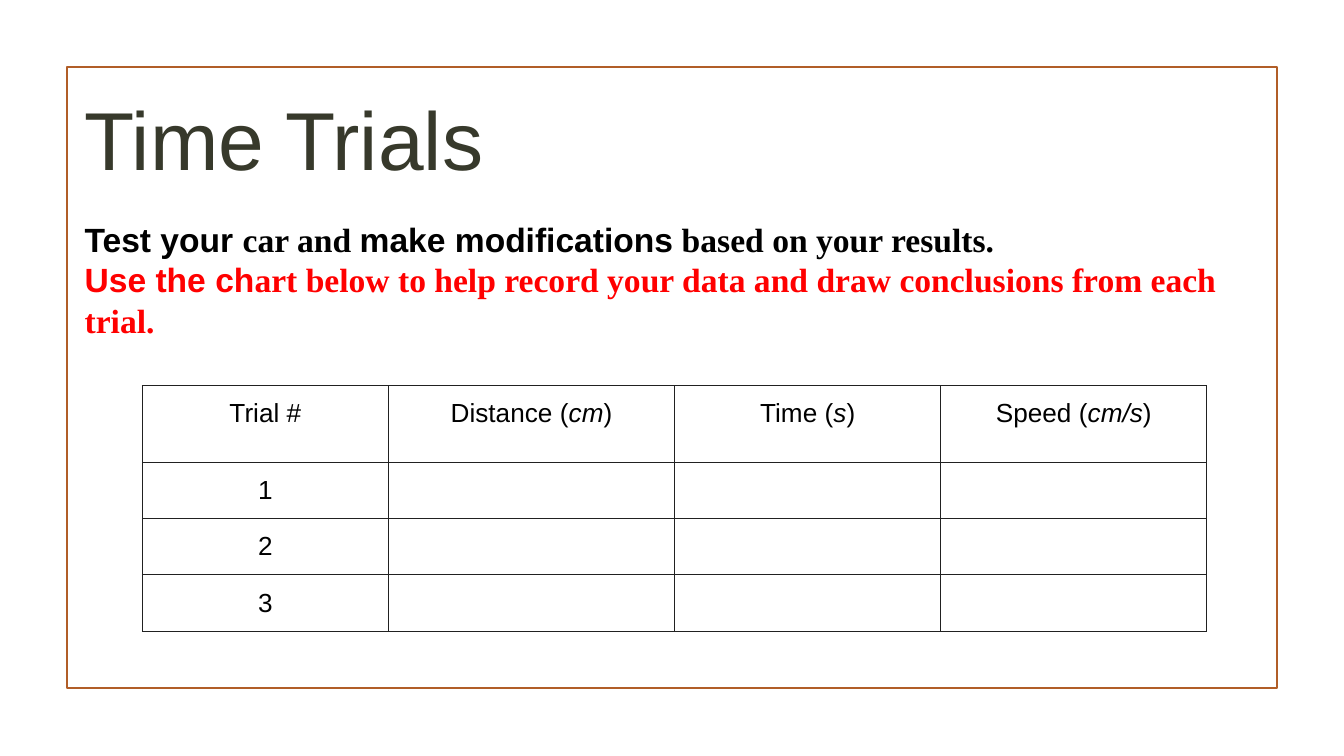
from dataclasses import dataclass

from lxml import etree
from pptx import Presentation
from pptx import util as u
from pptx.dml.color import RGBColor
from pptx.enum import shapes, text
from pptx.oxml import ns


@dataclass(frozen=True)
class Theme:
    sans: str = "Arial"
    serif: str = "Times New Roman"
    title_color: str = "37392B"
    ink: str = "000000"
    accent: str = "FF0000"
    frame: str = "B15E28"
    border: str = "212121"
    paper: str = "FFFFFF"
    title_size: float = 44
    body_size: float = 18
    cell_size: float = 14


def add_run(p, content, font, size, color, bold=False, italic=False):
    r = p.add_run()
    r.text = content
    f = r.font
    f.name, f.size, f.bold, f.italic = font, u.Pt(size), bold, italic
    f.color.rgb = RGBColor.from_string(color)


class SlideBuilder:
    """Draw styled elements on the current slide."""

    def __init__(self, prs, theme):
        self.theme = theme
        self.s = prs.slides.add_slide(prs.slide_layouts[1])

    def frame(self, *box):
        sp = self.s.shapes.add_shape(shapes.MSO_SHAPE.RECTANGLE, *map(u.Inches, box))
        sp.shadow.inherit = False
        sp.fill.background()
        sp.line.color.rgb = RGBColor.from_string(self.theme.frame)
        sp.line.width = u.Pt(1.25)

    def place(self, sp, box, inset):
        sp.left, sp.top, sp.width, sp.height = map(u.Inches, box)
        tf = sp.text_frame
        tf.word_wrap = True
        tf.auto_size = text.MSO_AUTO_SIZE.NONE
        tf.vertical_anchor = text.MSO_ANCHOR.TOP
        tf.margin_left = tf.margin_right = u.Inches(0.1)
        tf.margin_top = tf.margin_bottom = u.Inches(inset)
        return tf

    def title(self, content, *box):
        t = self.theme
        p = self.place(self.s.shapes.title, box, 0.05).paragraphs[0]
        p.alignment = text.PP_ALIGN.LEFT
        add_run(p, content, t.sans, t.title_size, t.title_color)

    def body(self, lines, *box):
        t = self.theme
        tf = self.place(self.s.placeholders[1], box, 0.1)
        for i, (color, parts) in enumerate(lines):
            p = tf.add_paragraph() if i else tf.paragraphs[0]
            pPr = p._p.get_or_add_pPr()
            pPr.set("marL", "0")
            pPr.set("indent", "0")
            etree.SubElement(pPr, ns.qn("a:buNone"))
            p.alignment = text.PP_ALIGN.LEFT
            p.space_before = u.Pt(0)
            p.line_spacing = 1.0
            for j, part in enumerate(parts):
                font = t.serif if j % 2 else t.sans
                add_run(p, part, font, t.body_size, color, bold=True)

    def cell(self, cell, parts):
        t = self.theme
        cell.margin_left = cell.margin_right = u.Inches(0.1)
        cell.margin_top = cell.margin_bottom = u.Inches(0.1)
        tcPr = cell._tc.get_or_add_tcPr()
        for side in ("a:lnL", "a:lnR", "a:lnT", "a:lnB"):
            ln = etree.SubElement(tcPr, ns.qn(side), w=str(u.Pt(0.75)))
            fill = etree.SubElement(ln, ns.qn("a:solidFill"))
            etree.SubElement(fill, ns.qn("a:srgbClr"), val=t.border)
        cell.fill.solid()
        cell.fill.fore_color.rgb = RGBColor.from_string(t.paper)
        p = cell.text_frame.paragraphs[0]
        p.alignment = text.PP_ALIGN.CENTER
        for i, part in enumerate(parts):
            add_run(p, part, t.sans, t.cell_size, t.ink, italic=i % 2 == 1)
        if not parts:
            end = etree.SubElement(p._p, ns.qn("a:endParaRPr"), sz=str(int(t.cell_size * 100)))
            etree.SubElement(end, ns.qn("a:latin"), typeface=t.sans)

    def table(self, rows, widths, heights, left, top, height):
        box = (left, top, sum(widths), height)
        holder = self.s.shapes.add_table(len(rows), len(widths), *map(u.Inches, box))
        table = holder.table
        table.first_row = table.horz_banding = False
        for column, width in zip(table.columns, widths):
            column.width = u.Inches(width)
        for row, row_height, contents in zip(table.rows, heights, rows):
            row.height = u.Inches(row_height)
            for cell, parts in zip(row.cells, contents):
                self.cell(cell, parts)
        holder.height = u.Inches(height)


def main():
    prs = Presentation()
    prs.slide_width, prs.slide_height = u.Inches(10), u.Inches(10 * 9 / 16)
    theme = Theme()
    slide = SlideBuilder(prs, theme)
    slide.frame(0.5, 0.5, 9, 4.62)
    slide.title("Time Trials", 0.53, 0.61, 6.99, 1.11)
    slide.body([
        (theme.ink, ["Test your ", "car and ", "make modifications", " based on your results."]),
        (theme.accent, ["Use the ch", "art below to help record your data and draw conclusions from each trial."]),
    ], 0.53, 1.53, 8.99, 0.75)
    header = [["Trial #"], ["Distance (", "cm", ")"], ["Time (", "s", ")"], ["Speed (", "cm/s", ")"]]
    trials = [[[str(n)], [], [], []] for n in range(1, 4)]
    slide.table([header] + trials, [1.83, 2.13, 1.98, 1.98], [0.57] + [0.31] * 3, 1.06, 2.87, 1.87)
    prs.save("out.pptx")


if __name__ == "__main__":
    main()
